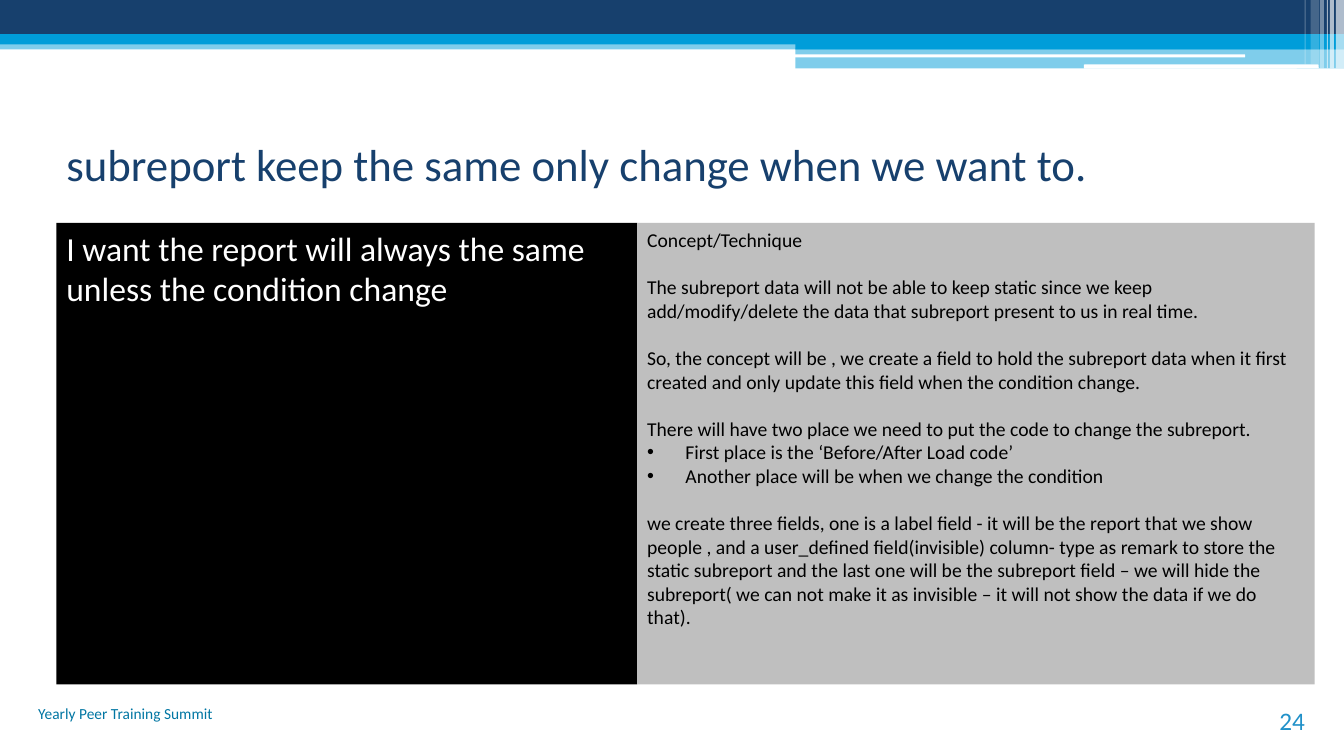
from lxml import etree
from pptx import Presentation, util as u
from pptx.dml.color import RGBColor
from pptx.enum import shapes, text
from pptx.oxml.ns import qn

PX = 9144  # EMU per px, 100 px to the inch
THEME = {
    "font": "Calibri",
    "navy": "17406D", "blue": "009DD9", "white": "FFFFFF", "black": "000000",
    "gray": "BFBFBF", "footer": "0076A3", "number": "2191C9",
    "title_size": 32, "lead_size": 24, "body_size": 14, "footer_size": 11, "number_size": 18,
}
LINE_GAP = 17  # points, one body line
BULLET_INDENT = 38

deck = Presentation()
deck.slide_width, deck.slide_height = 1333 * PX, 750 * PX
page = deck.slides.add_slide(deck.slide_layouts[6])


def add_block(area, color, opacity=100, kind=shapes.MSO_SHAPE.RECTANGLE):
    block = page.shapes.add_shape(kind, *(length * PX for length in area))
    block.shadow.inherit = False
    block.fill.solid()
    block.fill.fore_color.rgb = RGBColor.from_string(THEME[color])
    block.line.fill.background()
    if opacity < 100:
        tint = block.fill._xPr.find(qn("a:solidFill"))[0]
        etree.SubElement(tint, qn("a:alpha")).set("val", str(opacity * 1000))
    return block


def write(box, paragraphs, size, color, align="LEFT", anchor="TOP"):
    frame = box.text_frame
    frame.word_wrap = True
    frame.vertical_anchor = getattr(text.MSO_ANCHOR, anchor)
    for index, (wording, gap, bullet) in enumerate(paragraphs):
        para = frame.add_paragraph() if index else frame.paragraphs[0]
        para.alignment = getattr(text.PP_ALIGN, align)
        if gap:
            para.space_before = u.Pt(gap)
        if bullet:
            properties = para._p.get_or_add_pPr()
            properties.set("marL", str(BULLET_INDENT * PX))
            properties.set("indent", str(-BULLET_INDENT * PX))
            etree.SubElement(properties, qn("a:buFont")).set("typeface", "Arial")
            etree.SubElement(properties, qn("a:buChar")).set("char", "•")
        span = para.add_run()
        span.text = wording
        for name, value in {"name": THEME["font"], "size": u.Pt(THEME[size])}.items():
            setattr(span.font, name, value)
        span.font.color.rgb = RGBColor.from_string(THEME[color])


# Header bands
for area, color, opacity in [
    ((0, 40, 1333, 9), "blue", 50),
    ((0, 0, 1333, 34), "navy", 100),
    ((0, 34, 1333, 10), "blue", 100),
    ((789, 39, 544, 10), "blue", 100),
    ((789, 48, 544, 20), "blue", 50),
]:
    add_block(area, color, opacity)

# White slits in the bands
for area in [(788, 54, 447, 3), (1075, 64, 233, 4)]:
    add_block(area, "white", kind=shapes.MSO_SHAPE.ROUNDED_RECTANGLE)

# Translucent stripes in the corner
for left, width, height, opacity in [
    (1325, 8, 68, 65), (1319, 4, 68, 65), (1316, 1, 68, 60),
    (1309, 4, 68, 40), (1300, 8, 64, 20), (1294, 1, 64, 30),
]:
    add_block((left, 0, width, height), "white", opacity)

# Title, footer and page number
for area, wording, size, color, align, anchor in [
    ((56, 104, 1183, 117), "subreport keep the same only change when we want to.",
     "title_size", "navy", "LEFT", "MIDDLE"),
    ((0, 694, 221, 50), "Yearly Peer Training Summit", "footer_size", "footer", "RIGHT", "TOP"),
    ((1193, 695, 111, 40), "24", "number_size", "number", "RIGHT", "BOTTOM"),
]:
    box = page.shapes.add_textbox(*(length * PX for length in area))
    write(box, [(wording, 0, False)], size, color, align, anchor)

# Goal panel
goal = add_block((56, 221, 576, 458), "black")
write(goal, [("I want the report will always the same unless the condition change", 0, False)],
      "lead_size", "white")

# Concept panel: wording, gap above, bullet
concept = add_block((632, 221, 672, 458), "gray")
write(concept, [
    ("Concept/Technique", 0, False),
    ("The subreport data will not be able to keep static since we keep add/modify/delete "
     "the data that subreport present to us in real time.", LINE_GAP, False),
    ("So, the concept will be , we create a field to hold the subreport data when it first "
     "created and only update this field when the condition change.", LINE_GAP, False),
    ("There will have two place we need to put the code to change the subreport.",
     LINE_GAP, False),
    ("First place is the ‘Before/After Load code’", 0, True),
    ("Another place will be when we change the condition", 0, True),
    ("we create three fields, one is a label field - it will be the report that we show "
     "people , and a user_defined field(invisible) column- type as remark to store the static "
     "subreport and the last one will be the subreport field – we will hide the subreport( we "
     "can not make it as invisible – it will not show the data if we do that).",
     LINE_GAP, False),
], "body_size", "black")

deck.save("out.pptx")
